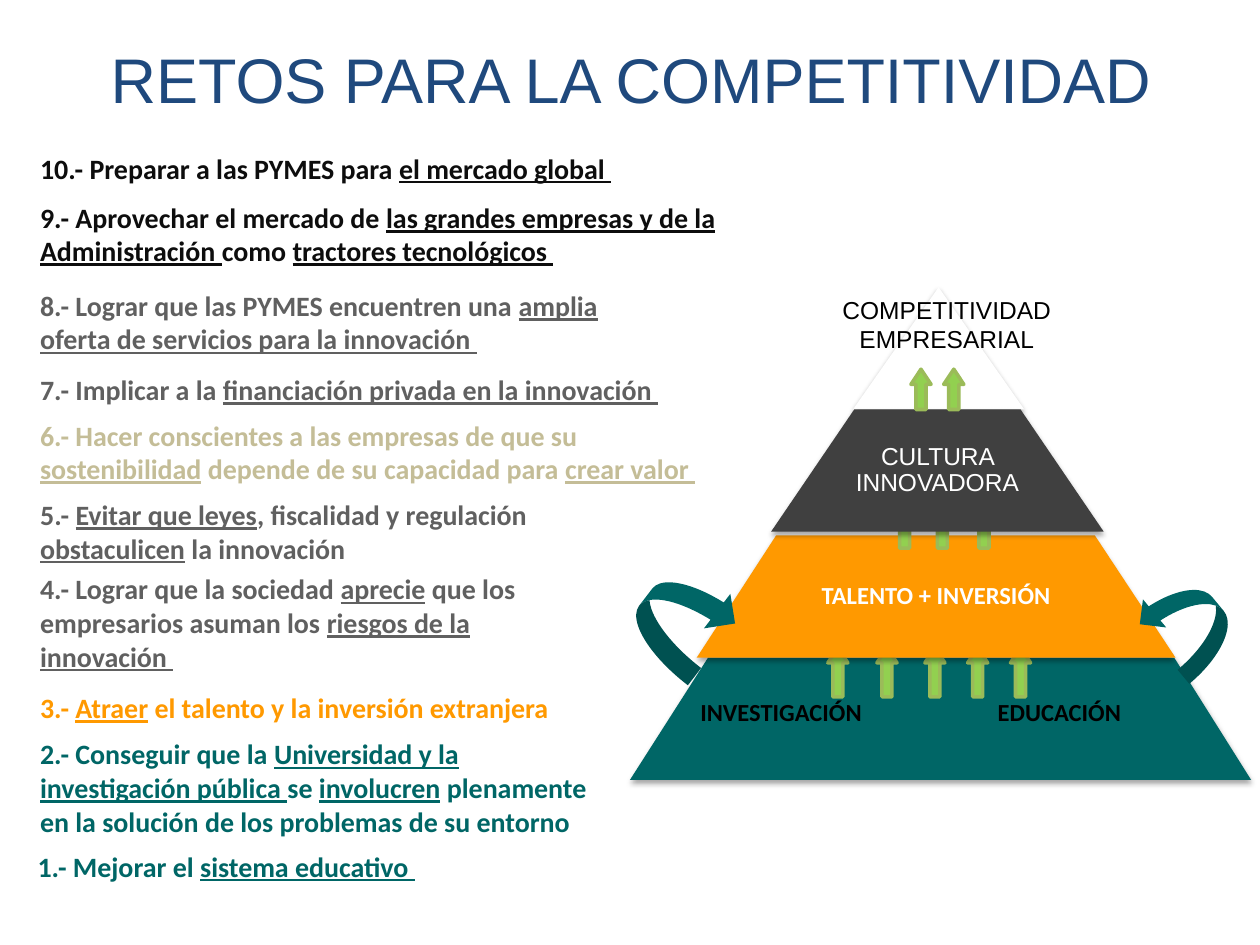
import dataclasses

import pptx
import pptx.dml.color
import pptx.enum.shapes
import pptx.enum.text
import pptx.oxml
import pptx.oxml.ns
import pptx.util

Inches = pptx.util.Inches
Pt = pptx.util.Pt
ALIGN = pptx.enum.text.PP_ALIGN
SHAPE = pptx.enum.shapes.MSO_SHAPE


@dataclasses.dataclass(frozen=True)
class Theme:
    """Colours, fonts and type sizes of the slide."""
    navy: str = "1F497D"
    black: str = "000000"
    ink: str = "0D0D0D"
    grey: str = "606060"
    sand: str = "C4BD97"
    orange: str = "FF9900"
    teal: str = "006666"
    charcoal: str = "404040"
    white: str = "FFFFFF"
    green: str = "92D050"
    olive: str = "9BBB59"
    heading: str = "Arial"
    body: str = "Calibri"
    title_size: int = 36
    challenge_size: int = 16
    label_size: int = 14


THEME = Theme()

CHALLENGES = [
    (0.22, 1.15, 4.94, 0.37, THEME.ink, "10.- Preparar a las PYMES para _el mercado global _"),
    (0.22, 1.54, 5.87, 0.64, THEME.ink, "9.- Aprovechar el mercado de _las grandes empresas y de la "
     "Administración _como _tractores tecnológicos _"),
    (0.22, 2.24, 5.17, 0.64, THEME.grey, "8.- Lograr que las PYMES encuentren una _amplia oferta de "
     "servicios para la innovación _"),
    (0.22, 2.91, 6.06, 0.37, THEME.grey, "7.- Implicar a la _financiación privada en la innovación _"),
    (0.22, 3.27, 5.5, 0.64, THEME.sand, "6.- Hacer conscientes a las empresas de que su _sostenibilidad_ "
     "depende de su capacidad para _crear valor _"),
    (0.22, 3.9, 4.39, 0.64, THEME.grey, "5.- _Evitar que leyes_, fiscalidad y regulación _obstaculicen_ "
     "la innovación"),
    (0.22, 4.49, 4.13, 0.91, THEME.grey, "4.- Lograr que la sociedad _aprecie_ que los empresarios asuman "
     "los _riesgos de la innovación _"),
    (0.22, 5.43, 4.86, 0.37, THEME.orange, "3.- _Atraer_ el talento y la inversión extranjera"),
    (0.22, 5.8, 4.7, 0.91, THEME.teal, "2.- Conseguir que la _Universidad y la investigación pública _se "
     "_involucren_ plenamente en la solución de los problemas de su entorno"),
    (0.2, 6.69, 3.85, 0.37, THEME.teal, "1.- Mejorar el _sistema educativo _"),
]


def set_font(font, name, size, color, bold=False):
    """Apply name, size, colour and weight to a font."""
    font.name, font.size, font.bold = name, Pt(size), bold
    font.color.rgb = pptx.dml.color.RGBColor.from_string(color)


def fill_shape(shape, color):
    """Give a shape a plain fill without line or shadow."""
    shape.shadow.inherit = False
    shape.fill.solid()
    shape.fill.fore_color.rgb = pptx.dml.color.RGBColor.from_string(color)
    shape.line.fill.background()


def add_label(page, bounds, text, font, size, color, bold=False, wrap=False, align=ALIGN.LEFT):
    """Add a text box with one style for all its paragraphs."""
    box = page.shapes.add_textbox(*map(Inches, bounds))
    frame = box.text_frame
    frame.word_wrap = wrap
    frame.text = text
    for para in frame.paragraphs:
        para.alignment = align
        for span in para.runs:
            set_font(span.font, font, size, color, bold)
    return box


def add_challenge(page, left, top, width, height, color, text):
    """Add a challenge whose parts between underscores are underlined."""
    box = page.shapes.add_textbox(*map(Inches, (left, top, width, height)))
    box.text_frame.word_wrap = True
    para = box.text_frame.paragraphs[0]
    for index, part in enumerate(text.split("_")):
        if part:
            span = para.add_run()
            span.text = part
            set_font(span.font, THEME.body, THEME.challenge_size, color, True)
            span.font.underline = index % 2 == 1


def add_tier(page, top, base, roof, color):
    """Add a shadowed pyramid tier from its base and roof edges."""
    bottom = top + 0.97
    corners = [(base[0], bottom), (roof[0], top), (roof[1], top), (base[1], bottom)]
    points = [(Inches(x), Inches(y)) for x, y in corners]
    builder = page.shapes.build_freeform(*points[0], scale=1.0)
    builder.add_line_segments(points[1:], close=True)
    tier = builder.convert_to_shape()
    fill_shape(tier, color)
    effects = tier.element.spPr.find(pptx.oxml.ns.qn("a:effectLst"))
    effects.append(pptx.oxml.parse_xml(
        f'<a:outerShdw {pptx.oxml.ns.nsdecls("a")} blurRad="{Pt(3.1)}" dist="{Pt(1.8)}" '
        'dir="5400000" rotWithShape="0"><a:srgbClr val="000000"><a:alpha val="35000"/>'
        '</a:srgbClr></a:outerShdw>'))
    return tier


def write_tier(tier, text, font, inset, bold=False):
    """Write centred white text inside a tier."""
    frame = tier.text_frame
    frame.word_wrap = True
    frame.vertical_anchor = pptx.enum.text.MSO_ANCHOR.MIDDLE
    frame.margin_left = frame.margin_right = Inches(inset)
    frame.margin_top = frame.margin_bottom = Inches(0.03)
    frame.text = text
    para = frame.paragraphs[0]
    para.alignment = ALIGN.CENTER
    para.line_spacing = 0.9
    set_font(para.runs[0].font, font, THEME.label_size, THEME.white, bold)


def add_up_arrows(page, lefts, top, height):
    """Add a row of small green arrows pointing up."""
    for left in lefts:
        arrow = page.shapes.add_shape(SHAPE.UP_ARROW, *map(Inches, (left, top, 0.16, height)))
        fill_shape(arrow, THEME.green)
        arrow.line.color.rgb = pptx.dml.color.RGBColor.from_string(THEME.olive)
        arrow.line.width = Pt(2)
        arrow.adjustments[0], arrow.adjustments[1] = 0.5, 0.755


def add_curved_arrow(page, bounds, rotation, flips):
    """Add a curved teal arrow, mirrored along the given axes."""
    arrow = page.shapes.add_shape(SHAPE.CURVED_RIGHT_ARROW, *map(Inches, bounds))
    fill_shape(arrow, THEME.teal)
    arrow.rotation = rotation
    frame = arrow.element.spPr.find(pptx.oxml.ns.qn("a:xfrm"))
    for flip in flips:
        frame.set(flip, "1")


def add_pyramid(page):
    """Build the four tiers with their labels and arrows."""
    add_tier(page, 2.28, (6.77, 8.13), (7.45, 7.45), THEME.white)
    add_label(page, (6.58, 2.29, 1.87, 0.57), "COMPETITIVIDAD\nEMPRESARIAL", THEME.heading,
              THEME.label_size, THEME.black, align=ALIGN.CENTER)

    add_tier(page, 5.22, (5, 9.93), (5.62, 9.32), THEME.teal)
    for left, width, text in [(5.46, 1.5, "INVESTIGACIÓN"), (7.82, 1.19, "EDUCACIÓN")]:
        add_label(page, (left, 5.48, width, 0.34), text, THEME.body,
                  THEME.label_size, THEME.black, bold=True)
    add_up_arrows(page, (6.57, 6.96, 7.34, 7.68, 8.02), 5.14, 0.39)

    talent = add_tier(page, 4.25, (5.53, 9.33), (6.16, 8.69), THEME.orange)
    write_tier(talent, "TALENTO + INVERSIÓN", THEME.body, 0.9, bold=True)
    add_curved_arrow(page, (5.08, 4.52, 0.69, 0.79), 37.4, ["flipV"])
    add_curved_arrow(page, (9.13, 4.57, 0.58, 0.76), 320.3, ["flipH", "flipV"])
    add_up_arrows(page, (7.1, 7.4, 7.73), 4.03, 0.32)

    culture = add_tier(page, 3.25, (6.12, 8.76), (6.78, 8.1), THEME.charcoal)
    write_tier(culture, "CULTURA INNOVADORA", THEME.heading, 0.6)
    add_up_arrows(page, (7.23, 7.49), 2.93, 0.32)


def main():
    """Build the slide and save the deck."""
    deck = pptx.Presentation()
    deck.slide_width, deck.slide_height = Inches(10), Inches(7.5)
    page = deck.slides.add_slide(deck.slide_layouts[6])
    add_pyramid(page)
    for challenge in CHALLENGES:
        add_challenge(page, *challenge)
    title = add_label(page, (0.51, 0, 9, 1.25), "RETOS PARA LA COMPETITIVIDAD", THEME.heading,
                      THEME.title_size, THEME.navy, wrap=True, align=ALIGN.CENTER)
    title.text_frame.vertical_anchor = pptx.enum.text.MSO_ANCHOR.MIDDLE
    deck.save("out.pptx")


if __name__ == "__main__":
    main()
